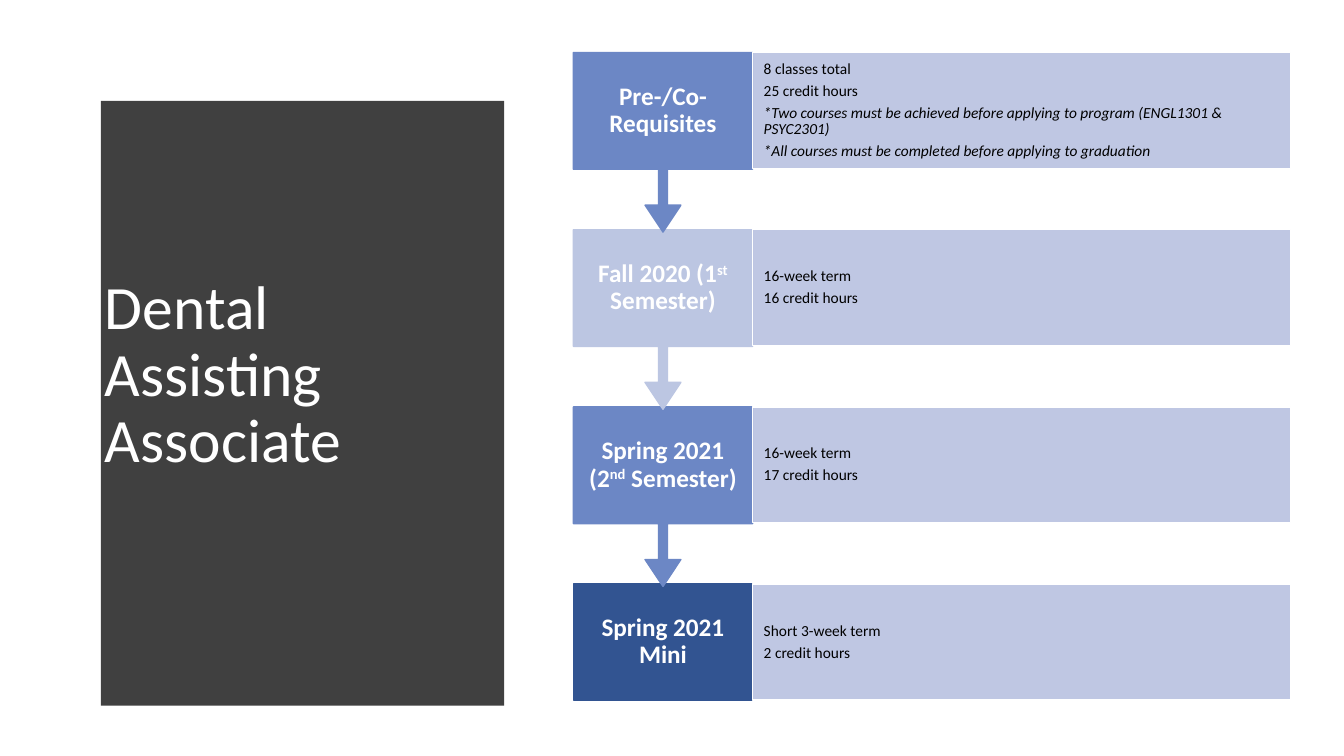
from dataclasses import dataclass

from lxml import etree
from pptx import Presentation
from pptx import util as u
from pptx.dml.color import RGBColor
from pptx.enum import shapes, text
from pptx.oxml import ns


@dataclass(frozen=True)
class Theme:
    font: str = "Calibri"
    title_size: int = 44
    label_size: int = 18
    detail_size: int = 11
    white: str = "FFFFFF"
    black: str = "000000"
    panel: str = "404040"
    mid_blue: str = "6C87C5"
    pale_blue: str = "BCC6E2"
    dark_blue: str = "325491"
    detail_fill: str = "B9C2E1"


WIDTH, HEIGHT = 13.33, 7.5
COLS, ROWS = 75, 64
LEFT, TOP, BOTTOM = 3, 4.45, 59.4
STEP_COL, STEP_COLS, DETAIL_COLS = 32, 10, 30
STEP_PITCH, BOX_ROWS, CALLOUT_ROWS = 15, 9.8, 15.2
LABEL_INSETS, DETAIL_INSETS = (0.13, 0.14), (0.11, 0.15)


class SlideBuilder:
    def __init__(self, slide, theme):
        self.s = slide
        self.theme = theme

    def box(self, col, row, cols, rows):
        """Turn grid units into left, top, width and height."""
        x, y = WIDTH / COLS, HEIGHT / ROWS
        return [u.Inches(v) for v in (col * x, row * y, cols * x, rows * y)]

    def paint(self, sp, fill, line=None, opacity=None):
        sp.shadow.inherit = False
        sp.fill.solid()
        sp.fill.fore_color.rgb = RGBColor.from_string(fill)
        if opacity:
            color = sp.fill._xPr.find(".//" + ns.qn("a:srgbClr"))
            etree.SubElement(color, ns.qn("a:alpha"), val=str(opacity * 1000))
        if line:
            sp.line.color.rgb = RGBColor.from_string(line)
            sp.line.width = u.Pt(1)
        else:
            sp.line.fill.background()

    def style(self, tf, size, color, align, insets=(0.1, 0.05), bold=False, after=0.35):
        """Format the frame and its runs; after is a share of the type size."""
        tf.word_wrap = True
        tf.vertical_anchor = text.MSO_ANCHOR.MIDDLE
        tf.margin_left = tf.margin_right = u.Inches(insets[0])
        tf.margin_top = tf.margin_bottom = u.Inches(insets[1])
        for p in tf.paragraphs:
            p.alignment = align
            p.line_spacing = 0.9
            p.space_after = u.Pt(size * after)
            for r in p.runs:
                r.font.name = self.theme.font
                r.font.size = u.Pt(size)
                r.font.bold = bold
                r.font.color.rgb = RGBColor.from_string(color)

    def curved_panel(self, col, row, edge_col, peak_col, end_row, segments=40):
        """Draw a panel whose right side is a parabola."""
        def point(c, r):
            return c * WIDTH / COLS, r * HEIGHT / ROWS

        curve = []
        for i in range(segments + 1):
            t = 2 * i / segments - 1
            curve.append(point(peak_col - (peak_col - edge_col) * t * t,
                               row + (end_row - row) * i / segments))
        ff = self.s.shapes.build_freeform(*point(col, row), scale=u.Inches(1))
        ff.add_line_segments(curve + [point(col, end_row)], close=True)
        self.paint(ff.convert_to_shape(), self.theme.panel)

    def title(self, words, *grid):
        tf = self.s.shapes.add_textbox(*self.box(*grid)).text_frame
        tf.text = words
        self.style(tf, self.theme.title_size, self.theme.white,
                   text.PP_ALIGN.LEFT, after=0)

    def label(self, words, fill, row, has_arrow):
        """Add a step box; parts between ^ marks are superscript."""
        kind = shapes.MSO_SHAPE.RECTANGLE
        rows = BOX_ROWS
        if has_arrow:
            kind, rows = shapes.MSO_SHAPE.DOWN_ARROW_CALLOUT, CALLOUT_ROWS
        sp = self.s.shapes.add_shape(kind, *self.box(STEP_COL, row, STEP_COLS, rows))
        if has_arrow:
            for i, value in enumerate((0.05, 0.1, 0.15, 0.65)):
                sp.adjustments[i] = value
        self.paint(sp, fill, fill)
        p = sp.text_frame.paragraphs[0]
        for i, part in enumerate(words.split("^")):
            r = p.add_run()
            r.text = part
            if i % 2:
                r._r.get_or_add_rPr().set("baseline", "30000")
        self.style(sp.text_frame, self.theme.label_size, self.theme.white,
                   text.PP_ALIGN.CENTER, LABEL_INSETS, bold=True)

    def details(self, lines, row):
        grid = self.box(STEP_COL + STEP_COLS, row, DETAIL_COLS, BOX_ROWS)
        sp = self.s.shapes.add_shape(shapes.MSO_SHAPE.RECTANGLE, *grid)
        self.paint(sp, self.theme.detail_fill, self.theme.white, opacity=90)
        tf = sp.text_frame
        tf.text = "\n".join(lines)
        self.style(tf, self.theme.detail_size, self.theme.black,
                   text.PP_ALIGN.LEFT, DETAIL_INSETS)
        for p in tf.paragraphs:
            p.runs[0].font.italic = p.text.startswith("*")


def main():
    theme = Theme()
    steps = [
        ("Pre-/Co-Requisites", theme.mid_blue, [
            "8 classes total",
            "25 credit hours",
            "*Two courses must be achieved before applying to program (ENGL1301 & PSYC2301)",
            "*All courses must be completed before applying to graduation",
        ]),
        ("Fall 2020 (1^st^ Semester)", theme.pale_blue,
         ["16-week term", "16 credit hours"]),
        ("Spring 2021 (2^nd^ Semester)", theme.mid_blue,
         ["16-week term", "17 credit hours"]),
        ("Spring 2021 Mini", theme.dark_blue,
         ["Short 3-week term", "2 credit hours"]),
    ]

    prs = Presentation()
    prs.slide_width, prs.slide_height = u.Inches(WIDTH), u.Inches(HEIGHT)
    builder = SlideBuilder(prs.slides.add_slide(prs.slide_layouts[6]), theme)
    builder.curved_panel(LEFT, TOP, 28.6, 29.95, BOTTOM)
    builder.title("Dental Assisting Associate", 5.3, 9.5, 21, 44.7)

    # The last step goes first so each arrow tip lies over the box below it.
    last = len(steps) - 1
    for i in range(last, -1, -1):
        words, fill, lines = steps[i]
        row = TOP + i * STEP_PITCH
        builder.label(words, fill, row, has_arrow=i < last)
        builder.details(lines, row)

    prs.save("out.pptx")


if __name__ == "__main__":
    main()
